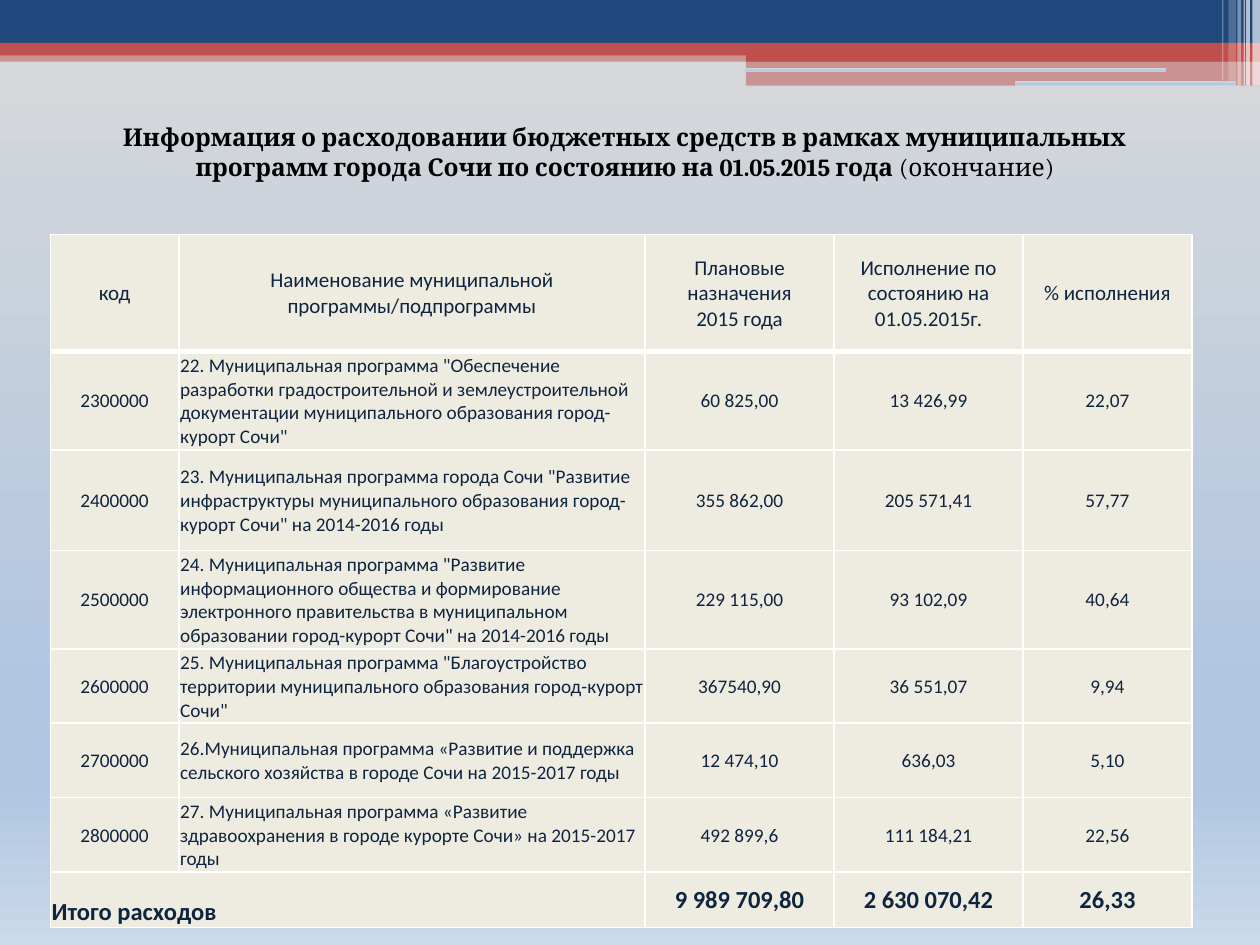
from dataclasses import dataclass

from lxml import etree
from pptx import Presentation
from pptx.dml.color import RGBColor
from pptx.enum.shapes import MSO_SHAPE
from pptx.enum.text import MSO_ANCHOR, MSO_AUTO_SIZE, PP_ALIGN
from pptx.oxml.ns import qn
from pptx.util import Inches, Pt

RECT, ROUNDED = MSO_SHAPE.RECTANGLE, MSO_SHAPE.ROUNDED_RECTANGLE
LEFT, CENTER = PP_ALIGN.LEFT, PP_ALIGN.CENTER
TOP, MIDDLE, BOTTOM = MSO_ANCHOR.TOP, MSO_ANCHOR.MIDDLE, MSO_ANCHOR.BOTTOM
FIT_SHAPE = MSO_AUTO_SIZE.SHAPE_TO_FIT_TEXT
TITLE_ONLY = 5
WIDTH, HEIGHT = Inches(10), Inches(7.5)


@dataclass(frozen=True)
class Theme:
    navy: str = "1F497D"
    red: str = "C0504D"
    white: str = "FFFFFF"
    black: str = "000000"
    ink: str = "0F243E"
    cell: str = "EEECE1"
    sky: tuple = ((0, "D9D9D9"), (74, "B0C6E1"), (83, "B0C6E1"), (100, "CAD9EB"))
    title_font: str = "Cambria"
    body_font: str = "Calibri"
    title_size: int = 14
    header_size: int = 12
    body_size: int = 11
    total_size: int = 14
    thin: int = 1
    thick: int = 3


THEME = Theme()

# Bands at the top: left, top, width, height in percent of the slide; colour, opacity
BANDS = [
    (0, 5.33, 100, 1.2, THEME.red, 50),
    (0, 0, 100, 4.53, THEME.navy, 100),
    (0, 4.53, 100, 1.33, THEME.red, 100),
    (59.2, 5.2, 40.8, 1.33, THEME.red, 100),
    (59.2, 6.4, 40.8, 2.67, THEME.red, 50),
]
# Thin bars in the background colours: left, top, width, height in percent
SLITS = [(59.1, 7.2, 33.5, 0.4), (80.6, 8.53, 17.5, 0.53)]
# White stripes in the corner: left, width, height in percent; opacity
STRIPES = [
    (99.4, 0.6, 9.07, 65),
    (98.9, 0.3, 9.07, 65),
    (98.7, 0.1, 9.07, 60),
    (98.2, 0.3, 9.07, 40),
    (97.5, 0.6, 8.53, 20),
    (97, 0.1, 8.53, 30),
]

TITLE = ("Информация о расходовании бюджетных средств в рамках муниципальных "
         "программ города Сочи по состоянию на 01.05.2015 года ")
TITLE_NOTE = "(окончание)"

COLUMNS = [10.2, 37, 15, 15, 13.4]  # percent of the slide's width
ROWS = [12.4, 10.4, 10.67, 10.4, 7.87, 7.87, 7.87, 5.87]  # percent of its height
HEADER = ["код", "Наименование муниципальной программы/подпрограммы",
          "Плановые\vназначения\v2015 года",
          "Исполнение по состоянию на 01.05.2015г.", "% исполнения"]
PROGRAMS = [
    ["2300000", '22. Муниципальная программа "Обеспечение разработки градостроительной '
     'и землеустроительной документации муниципального образования город-курорт Сочи"',
     "60 825,00", "13 426,99", "22,07"],
    ["2400000", '23. Муниципальная программа города Сочи "Развитие инфраструктуры '
     'муниципального образования город-курорт Сочи" на 2014-2016 годы',
     "355 862,00", "205 571,41", "57,77"],
    ["2500000", '24. Муниципальная программа "Развитие информационного общества и '
     'формирование электронного правительства в муниципальном образовании '
     'город-курорт Сочи" на 2014-2016 годы',
     "229 115,00", "93 102,09", "40,64"],
    ["2600000", '25. Муниципальная программа "Благоустройство территории '
     'муниципального образования город-курорт Сочи"',
     "367540,90", "36 551,07", "9,94"],
    ["2700000", "26.Муниципальная программа «Развитие и поддержка сельского "
     "хозяйства в городе Сочи на 2015-2017 годы",
     "12 474,10", "636,03", "5,10"],
    ["2800000", "27. Муниципальная программа «Развитие здравоохранения в городе "
     "курорте Сочи» на 2015-2017 годы",
     "492 899,6", "111 184,21", "22,56"],
]
TOTAL = ["Итого расходов", "", "9 989 709,80", "2 630 070,42", "26,33"]


def across(share):
    return round(WIDTH * share / 100)


def down(share):
    return round(HEIGHT * share / 100)


def place(left, top, width, height):
    return across(left), down(top), across(width), down(height)


def set_font(font, name, size, color, bold=False):
    font.name, font.size, font.bold = name, Pt(size), bold
    font.color.rgb = RGBColor.from_string(color)


def add_color(parent, color, opacity=100):
    node = etree.SubElement(parent, qn("a:srgbClr"), val=color)
    if opacity < 100:
        etree.SubElement(node, qn("a:alpha"), val=str(opacity * 1000))


def fill_sky(fill, owner):
    """Fill with the vertical background gradient."""
    fill.gradient()
    fill.gradient_angle = 270
    stops = next(owner.iter(qn("a:gsLst")))
    for stop in list(stops):
        stops.remove(stop)
    for position, color in THEME.sky:
        add_color(etree.SubElement(stops, qn("a:gs"), pos=str(position * 1000)), color)


def add_block(page, kind, box):
    block = page.shapes.add_shape(kind, *place(*box))
    block.shadow.inherit = False
    block.line.fill.background()
    return block


def add_band(page, box, color, opacity):
    band = add_block(page, RECT, box)
    band.fill.solid()
    band.fill.fore_color.rgb = RGBColor.from_string(color)
    if opacity < 100:
        solid = next(band._element.spPr.iter(qn("a:solidFill")))
        solid.remove(solid[0])
        add_color(solid, color, opacity)


def add_decoration(page):
    for *box, color, opacity in BANDS:
        add_band(page, box, color, opacity)
    for box in SLITS:
        slit = add_block(page, ROUNDED, box)
        fill_sky(slit.fill, slit._element.spPr)
    for left, width, height, opacity in STRIPES:
        add_band(page, (left, 0, width, height), THEME.white, opacity)


def set_title(page):
    title = page.shapes.title
    title.left, title.top, title.width, title.height = place(5.1, 12.27, 89, 7.6)
    frame = title.text_frame
    frame.word_wrap, frame.auto_size, frame.vertical_anchor = True, FIT_SHAPE, TOP
    para = frame.paragraphs[0]
    para.alignment = CENTER
    for text, bold in ((TITLE, True), (TITLE_NOTE, False)):
        span = para.add_run()
        span.text = text
        set_font(span.font, THEME.title_font, THEME.title_size, THEME.black, bold)


def set_borders(cell, top, bottom):
    properties = cell._tc.get_or_add_tcPr()
    sides = {"L": THEME.thin, "R": THEME.thin, "T": top, "B": bottom}
    for side, width in sides.items():
        line = etree.SubElement(properties, qn(f"a:ln{side}"), w=str(Pt(width)))
        add_color(etree.SubElement(line, qn("a:solidFill")), THEME.white)


def set_cell(cell, text, size, align=CENTER, anchor=MIDDLE, bold=False):
    cell.fill.solid()
    cell.fill.fore_color.rgb = RGBColor.from_string(THEME.cell)
    cell.margin_left = cell.margin_right = cell.margin_top = Inches(0.01)
    cell.margin_bottom = 0
    cell.vertical_anchor = anchor
    cell.text = text
    para = cell.text_frame.paragraphs[0]
    para.alignment = align
    set_font(para.font, THEME.body_font, size, THEME.ink, bold)


def add_budget_table(page):
    records = [HEADER, *PROGRAMS, TOTAL]
    box = place(4, 24.8, sum(COLUMNS), sum(ROWS))
    table = page.shapes.add_table(len(ROWS), len(COLUMNS), *box).table
    table.horz_banding = False
    for column, share in zip(table.columns, COLUMNS):
        column.width = across(share)
    for row, share in zip(table.rows, ROWS):
        row.height = down(share)

    last = len(records) - 1
    table.cell(last, 0).merge(table.cell(last, 1))
    for r, record in enumerate(records):
        size = {0: THEME.header_size, last: THEME.total_size}.get(r, THEME.body_size)
        for c, text in enumerate(record):
            cell = table.cell(r, c)
            set_borders(cell, THEME.thick if r == 1 else THEME.thin,
                        THEME.thick if r == 0 else THEME.thin)
            label = (r == last and c == 0) or (0 < r < last and c == 1)
            set_cell(cell, text, size, LEFT if label else CENTER,
                     BOTTOM if r == last and c == 0 else MIDDLE, r == last)


def main():
    deck = Presentation()
    deck.slide_width, deck.slide_height = WIDTH, HEIGHT
    page = deck.slides.add_slide(deck.slide_layouts[TITLE_ONLY])
    fill_sky(page.background.fill, page._element)
    add_decoration(page)
    add_budget_table(page)
    set_title(page)
    deck.save("out.pptx")


if __name__ == "__main__":
    main()
